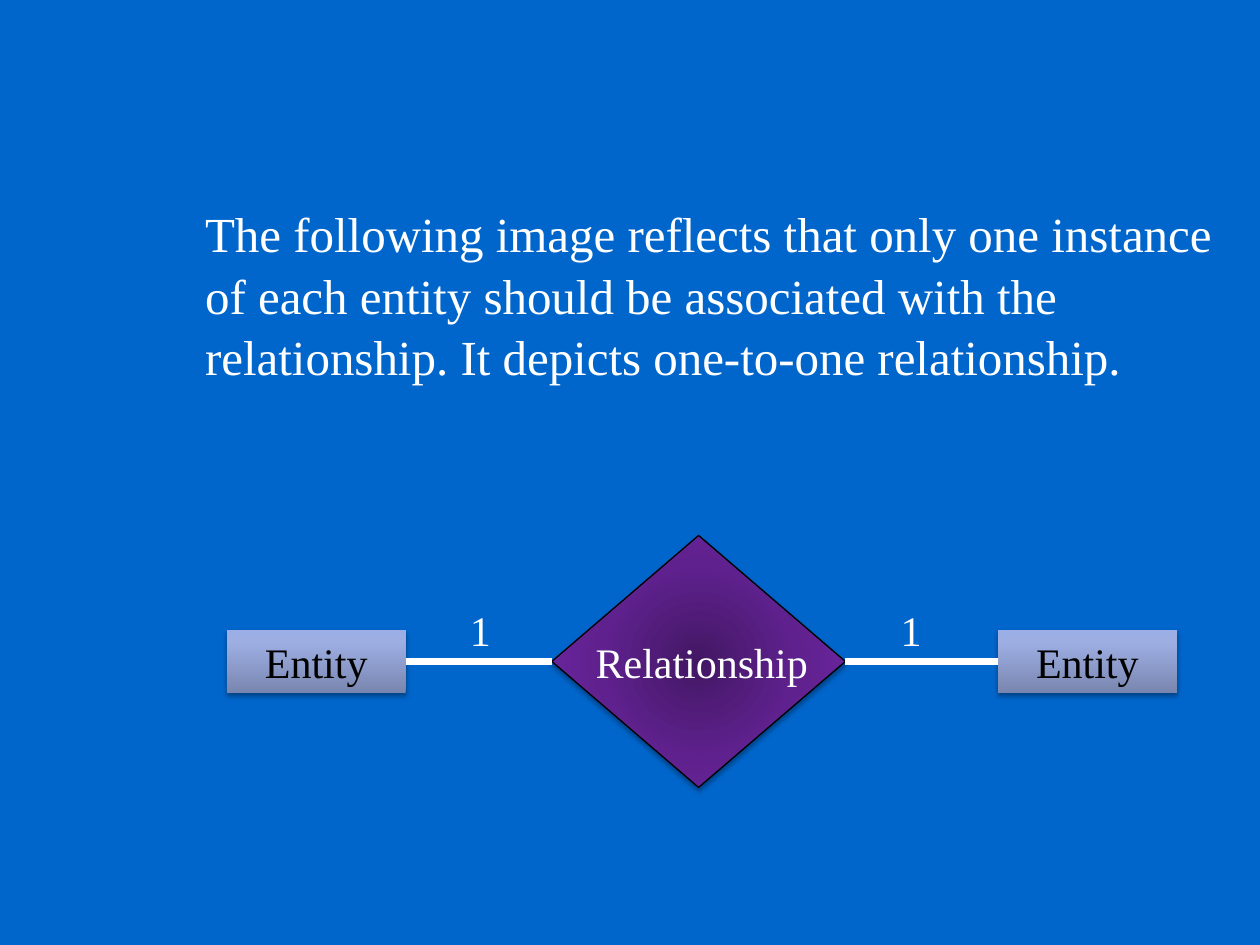
from dataclasses import dataclass

from lxml.etree import SubElement
from pptx import Presentation
from pptx.dml.color import RGBColor
from pptx.enum.shapes import MSO_CONNECTOR as Connector, MSO_SHAPE as Preset
from pptx.enum.text import MSO_ANCHOR as Anchor, PP_ALIGN as Align
from pptx.oxml import parse_xml
from pptx.oxml.ns import nsdecls, qn
from pptx.util import Inches, Pt

FONT = "Times New Roman"
WHITE, BLACK, BLUE = "FFFFFF", "000000", "0066CC"
LINEAR = '<a:lin ang="16200000" scaled="0"/>'
RADIAL = ('<a:path path="circle"><a:fillToRect l="50000" t="50000" '
          'r="50000" b="50000"/></a:path>')
ENTITY_STOPS = ((0, "7986AF"), (80, "9DAEE3"), (100, "9CAEE6"))
DIAMOND_STOPS = ((0, "431764"), (50, "5F218E"), (100, "7128A8"))


@dataclass(frozen=True)
class Box:
    left: float
    top: float
    width: float
    height: float

    def lengths(self) -> tuple:
        return tuple(Inches(n) for n in (self.left, self.top, self.width, self.height))


def color(value: str) -> RGBColor:
    return RGBColor.from_string(value)


def write(shape, text: str, size: float, text_color: str, align=Align.LEFT) -> None:
    paragraph = shape.text_frame.paragraphs[0]
    paragraph.alignment = align
    run = paragraph.add_run()
    run.text = text
    run.font.name = FONT
    run.font.size = Pt(size)
    run.font.color.rgb = color(text_color)


def add_text(shapes, box: Box, text: str, size: float = 24):
    text_box = shapes.add_textbox(*box.lengths())
    text_box.text_frame.word_wrap = True
    write(text_box, text, size, WHITE)
    return text_box


def add_node(shapes, preset, box: Box, stops: tuple, direction: str):
    shape = shapes.add_shape(preset, *box.lengths())
    shape.line.fill.background()
    shape.shadow.inherit = False
    properties = shape._element.spPr
    stop_xml = "".join(
        f'<a:gs pos="{position * 1000}"><a:srgbClr val="{value}"/></a:gs>'
        for position, value in stops)
    properties.find(qn("a:prstGeom")).addnext(parse_xml(
        f'<a:gradFill {nsdecls("a")} rotWithShape="1">'
        f'<a:gsLst>{stop_xml}</a:gsLst>{direction}</a:gradFill>'))
    properties.find(qn("a:effectLst")).append(parse_xml(
        f'<a:outerShdw {nsdecls("a")} blurRad="{Pt(3.1)}" dist="{Pt(1.8)}" '
        f'dir="5400000" rotWithShape="0"><a:srgbClr val="{BLACK}">'
        '<a:alpha val="35000"/></a:srgbClr></a:outerShdw>'))
    return shape


def add_entity(shapes, left: float):
    entity = add_node(shapes, Preset.RECTANGLE, Box(left, 5, 1.42, 0.5),
                      ENTITY_STOPS, LINEAR)
    entity.text_frame.vertical_anchor = Anchor.MIDDLE
    write(entity, "Entity", 24, BLACK, Align.CENTER)
    return entity


def add_link(shapes, start, end) -> None:
    link = shapes.add_connector(Connector.STRAIGHT, 0, 0, 0, 0)
    link.begin_connect(start, 3)
    link.end_connect(end, 1)
    link.line.color.rgb = color(WHITE)
    link.line.width = Pt(4.5)
    SubElement(link._element.spPr, qn("a:effectLst"))


def main() -> None:
    """Build the one-to-one relationship slide."""
    presentation = Presentation()
    presentation.slide_width = Inches(10)
    presentation.slide_height = Inches(7.5)
    slide = presentation.slides.add_slide(presentation.slide_layouts[6])
    slide.background.fill.solid()
    slide.background.fill.fore_color.rgb = color(BLUE)

    explanation = add_text(
        slide.shapes, Box(1.53, 1.52, 8.47, 1.99),
        "The following image reflects that only one instance of each entity should be "
        "associated with the relationship. It depicts one-to-one relationship.", 28)
    explanation.text_frame.margin_top = Inches(0.08)
    explanation.text_frame.paragraphs[0].line_spacing = 1.04

    diagram = slide.shapes.add_group_shape().shapes
    left_entity, right_entity = (add_entity(diagram, left) for left in (1.8, 7.92))
    diamond = add_node(diagram, Preset.DIAMOND, Box(4.38, 4.25, 2.33, 2),
                       DIAMOND_STOPS, RADIAL)
    diamond.line.color.rgb = color(BLACK)
    diamond.line.width = Pt(0.75)
    add_link(diagram, left_entity, diamond)
    add_link(diagram, diamond, right_entity)
    add_text(diagram, Box(4.63, 5, 2.33, 0.5), "Relationship")
    for left in (3.63, 7.05):
        add_text(diagram, Box(left, 4.75, 0.75, 0.5), "1")

    presentation.save("out.pptx")


if __name__ == "__main__":
    main()
